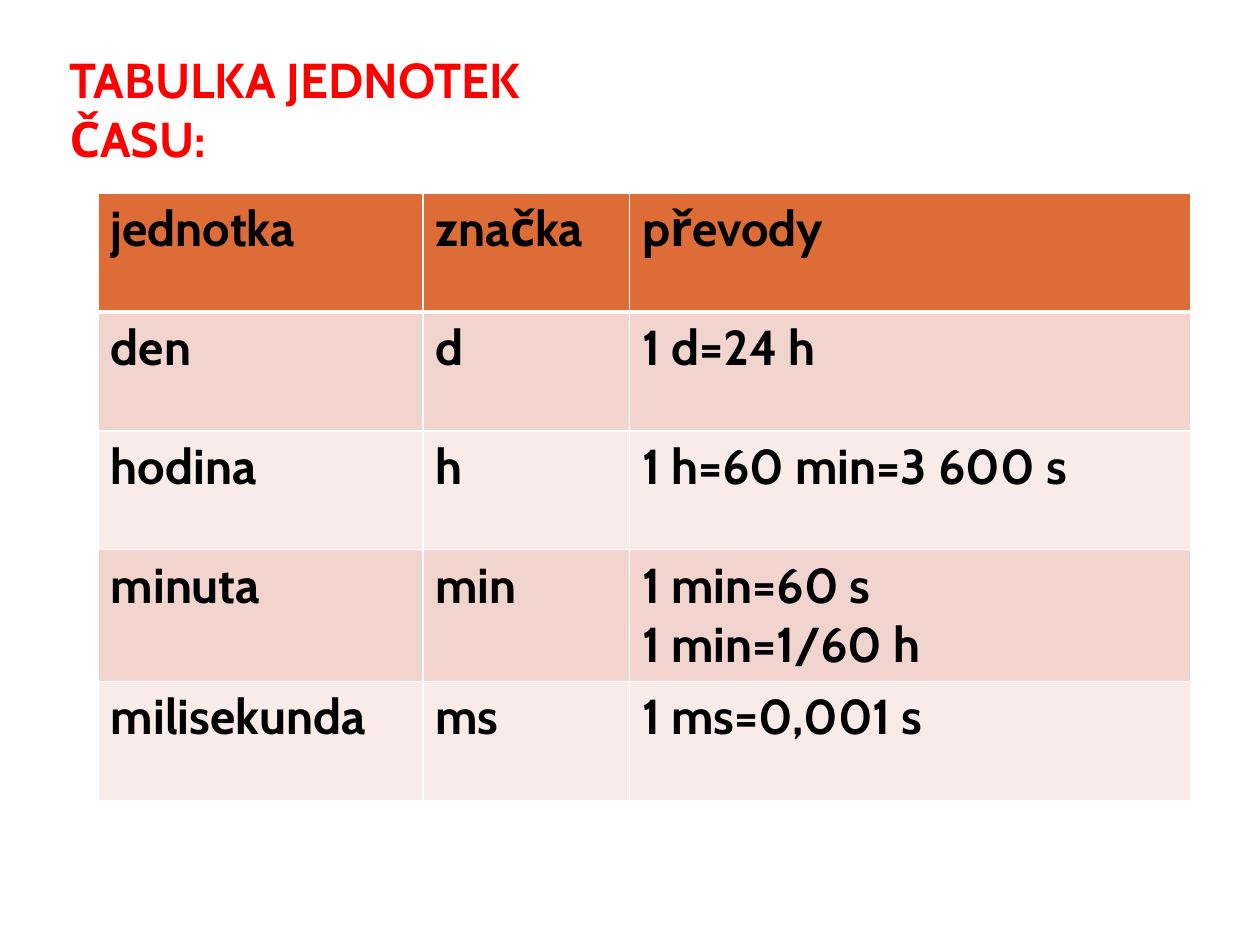
from dataclasses import dataclass

from pptx import Presentation
from pptx.dml.color import RGBColor
from pptx.enum import text as t
from pptx.oxml import parse_xml
from pptx.oxml.ns import nsdecls
from pptx.util import Pt


@dataclass(frozen=True)
class Theme:
    font: str = "Cabin"
    size: int = 28
    title: str = "FF0000"
    ink: str = "000000"
    line: str = "FFFFFF"
    head: str = "DE6C36"
    bands: tuple = ("F2D4CE", "F9EBE8")


ROWS = [
    ("jednotka", "značka", "převody"),
    ("den", "d", "1 d=24 h"),
    ("hodina", "h", "1 h=60 min=3 600 s"),
    ("minuta", "min", "1 min=60 s\n1 min=1/60 h"),
    ("milisekunda", "ms", "1 ms=0,001 s"),
]


def write(frame, words, *, font, size, color, bold=True):
    """Fill a text frame, one paragraph for each line of words."""
    frame.text = words
    for para in frame.paragraphs:
        para.alignment = t.PP_ALIGN.LEFT
        for run in para.runs:
            run.font.name = font
            run.font.size = Pt(size)
            run.font.bold = bold
            run.font.color.rgb = RGBColor.from_string(color)


class Page:
    """Holds the theme and the slide being drawn; lengths are in points."""

    def __init__(self, slide, theme):
        self.slide = slide
        self.theme = theme

    def title(self, words, left, top, width, height):
        shape = self.slide.shapes.title
        shape.left, shape.top = Pt(left), Pt(top)
        shape.width, shape.height = Pt(width), Pt(height)
        frame = shape.text_frame
        frame.word_wrap = True
        frame.auto_size = t.MSO_AUTO_SIZE.NONE
        frame.vertical_anchor = t.MSO_ANCHOR.BOTTOM
        frame.margin_left = frame.margin_right = Pt(3.6)
        frame.margin_top = frame.margin_bottom = 0
        write(frame, words, font=self.theme.font, size=self.theme.size,
              color=self.theme.title)

    def border(self, cell, base):
        """Line all four sides of a cell; base is the width at the bottom."""
        props = cell._tc.get_or_add_tcPr()
        for side, width in (("L", 1), ("R", 1), ("T", 1), ("B", base)):
            props.append(parse_xml(
                f'<a:ln{side} {nsdecls("a")} w="{Pt(width)}"><a:solidFill>'
                f'<a:srgbClr val="{self.theme.line}"/></a:solidFill></a:ln{side}>'))

    def table(self, rows, left, top, widths, height):
        """Draw a table with a header row; height is that of one row."""
        grid = self.slide.shapes.add_table(
            len(rows), len(widths), Pt(left), Pt(top),
            Pt(sum(widths)), Pt(height * len(rows))).table
        grid.horz_banding = False
        for col, width in zip(grid.columns, widths):
            col.width = Pt(width)
        for i, row in enumerate(rows):
            grid.rows[i].height = Pt(height)
            fill = self.theme.bands[(i - 1) % 2] if i else self.theme.head
            for j, words in enumerate(row):
                cell = grid.cell(i, j)
                self.border(cell, 1 if i else 3)
                cell.fill.solid()
                cell.fill.fore_color.rgb = RGBColor.from_string(fill)
                write(cell.text_frame, words, font=self.theme.font,
                      size=self.theme.size, color=self.theme.ink)


def main():
    deck = Presentation()
    deck.slide_width, deck.slide_height = Pt(720), Pt(540)
    page = Page(deck.slides.add_slide(deck.slide_layouts[5]), Theme())
    page.title("TABULKA JEDNOTEK ČASU:", 36, 21.6, 340.6, 74.2)
    page.table(ROWS, 56.2, 110.2, (185.5, 118.1, 320.4), 68)
    deck.save("out.pptx")


if __name__ == "__main__":
    main()
